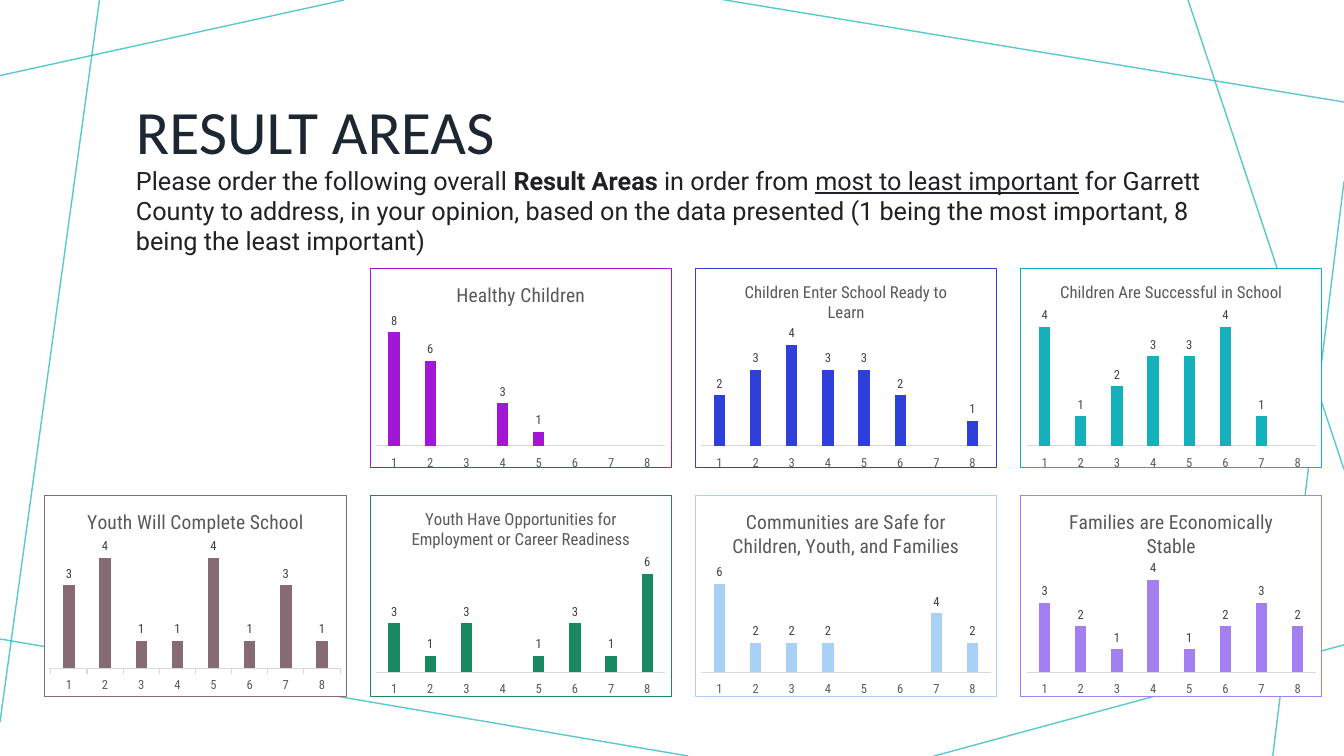
from collections import namedtuple
from dataclasses import dataclass

from lxml import etree
from pptx import Presentation
from pptx.chart.data import CategoryChartData
from pptx.dml.color import RGBColor
from pptx.enum.chart import XL_CHART_TYPE, XL_LABEL_POSITION, XL_TICK_LABEL_POSITION, XL_TICK_MARK
from pptx.enum.shapes import MSO_CONNECTOR
from pptx.enum.text import MSO_ANCHOR
from pptx.oxml import parse_xml
from pptx.oxml.ns import nsdecls, qn
from pptx.util import Inches, Pt

COLUMNS = XL_CHART_TYPE.COLUMN_CLUSTERED
OUTSIDE_END = XL_LABEL_POSITION.OUTSIDE_END
LABELS_LOW = XL_TICK_LABEL_POSITION.LOW
TICK_NONE, TICK_OUT = XL_TICK_MARK.NONE, XL_TICK_MARK.OUTSIDE
STRAIGHT = MSO_CONNECTOR.STRAIGHT
MIDDLE, TOP = MSO_ANCHOR.MIDDLE, MSO_ANCHOR.TOP

SLIDE_WIDTH, SLIDE_HEIGHT = Inches(13.33), Inches(7.5)
Box = namedtuple("Box", "left top width height")
Panel = namedtuple("Panel", "column row title size color values plot_top plot_bottom ticks")


@dataclass(frozen=True)
class Theme:
    heading_font: str = "Calibri"
    body_font: str = "Roboto"
    chart_font: str = "Roboto Condensed"
    heading_size: float = 44
    body_size: float = 18
    chart_size: float = 10
    label_size: float = 9
    heading: str = "1C2732"
    body: str = "202124"
    chart_text: str = "000000"
    muted: str = "595959"
    value: str = "404040"
    axis: str = "D9D9D9"
    accent: str = "14B1BC"
    paper: str = "FFFFFF"


THEME = Theme()

BACKGROUND_LINES = [
    (25.6, 0, 0, 10), (7.4, 0, 0, 95.5), (51.2, 100, -0.4, 84.4), (100, 85.3, 69.5, 100),
    (100, 24, 94.7, 100), (100, 62.1, 88.4, 0), (100, 13.5, 53.6, -0.1),
]

PANELS = [
    Panel(2, 0, "Children Enter School Ready to Learn", 12, "2E40D9",
          (2, 3, 4, 3, 3, 2, None, 1), 0.38, 0.89, TICK_NONE),
    Panel(1, 0, "Healthy Children", 14, "A217D5",
          (8, 6, None, 3, 1, None, None, None), 0.32, 0.89, TICK_NONE),
    Panel(3, 0, "Children Are Successful in School", 12, "14B1BC",
          (4, 1, 2, 3, 3, 4, 1, None), 0.29, 0.89, TICK_NONE),
    Panel(0, 1, "Youth Will Complete School", 14, "866B74",
          (3, 4, 1, 1, 4, 1, 3, 1), 0.31, 0.86, TICK_OUT),
    Panel(1, 1, "Youth Have Opportunities for Employment or Career Readiness", 12, "198962",
          (3, 1, 3, None, 1, 3, 1, 6), 0.39, 0.88, TICK_NONE),
    Panel(2, 1, "Communities are Safe for Children, Youth, and Families", 14, "A9D1F5",
          (6, 2, 2, 2, None, None, 4, 2), 0.44, 0.88, TICK_NONE),
    Panel(3, 1, "Families are Economically Stable", 14, "A37FF1",
          (3, 2, 1, 4, 1, 2, 3, 2), 0.42, 0.88, TICK_NONE),
]


def across(percent):
    return round(SLIDE_WIDTH * percent / 100)


def down(percent):
    return round(SLIDE_HEIGHT * percent / 100)


def place(box):
    return across(box.left), down(box.top), across(box.width), down(box.height)


def style_font(font, name, size, color):
    font.name, font.size = name, Pt(size)
    font.color.rgb = RGBColor.from_string(color)


def add_background(slide):
    for start_x, start_y, end_x, end_y in BACKGROUND_LINES:
        line = slide.shapes.add_connector(
            STRAIGHT, across(start_x), down(start_y), across(end_x), down(end_y))
        line.line.width = Pt(1)
        line.line.color.rgb = RGBColor.from_string(THEME.accent)
        color = next(line.element.iter(qn("a:srgbClr")))
        etree.SubElement(color, qn("a:alpha"), val="70000")
        etree.SubElement(line.element.spPr, qn("a:effectLst"))


def add_text(slide, box, runs, font, size, color, anchor, line_spacing):
    frame = slide.shapes.add_textbox(*place(box)).text_frame
    frame.word_wrap = True
    frame.vertical_anchor = anchor
    paragraph = frame.paragraphs[0]
    paragraph.line_spacing = line_spacing
    for text, bold, underline in runs:
        run = paragraph.add_run()
        run.text = text
        style_font(run.font, font, size, color)
        run.font.bold, run.font.underline = bold, underline


def add_header(slide, box):
    title_box = box._replace(height=20.13)
    add_text(slide, title_box, [("RESULT AREAS", False, False)],
             THEME.heading_font, THEME.heading_size, THEME.heading, MIDDLE, 0.9)
    question_box = Box(box.left, box.top + 13.47, box.width, 15.33)
    question = [
        ("Please order the following overall ", False, False),
        ("Result Areas", True, False),
        (" in order from ", False, False),
        ("most to least important", False, True),
        (" for Garrett County to address, in your opinion, based on the data presented "
         "(1 being the most important, 8 being the least important)", False, False),
    ]
    add_text(slide, question_box, question,
             THEME.body_font, THEME.body_size, THEME.body, TOP, 1)


def frame_chart(chart, color):
    chart.element.find(qn("c:chart")).addnext(parse_xml(
        f'<c:spPr {nsdecls("c", "a")}>'
        f'<a:solidFill><a:srgbClr val="{THEME.paper}"/></a:solidFill>'
        f'<a:ln w="9525"><a:solidFill><a:srgbClr val="{color}"/></a:solidFill></a:ln></c:spPr>'))


def fix_plot_area(chart, top, height):
    plot_area = next(chart.element.iter(qn("c:plotArea")))
    for layout in plot_area.findall(qn("c:layout")):
        plot_area.remove(layout)
    plot_area.insert(0, parse_xml(
        f'<c:layout {nsdecls("c")}><c:manualLayout><c:layoutTarget val="inner"/>'
        '<c:xMode val="edge"/><c:yMode val="edge"/><c:x val="0.02"/>'
        f'<c:y val="{top:.3f}"/><c:w val="0.96"/><c:h val="{height:.3f}"/>'
        '</c:manualLayout></c:layout>'))


def add_panel(slide, box, panel):
    data = CategoryChartData()
    data.categories = [str(rank) for rank in range(1, 9)]
    data.add_series(panel.title, panel.values)
    chart = slide.shapes.add_chart(COLUMNS, *place(box), data).chart
    style_font(chart.font, THEME.chart_font, THEME.chart_size, THEME.chart_text)
    chart.has_legend = False

    chart.has_title = True
    title = chart.chart_title.text_frame.paragraphs[0].add_run()
    title.text = panel.title
    style_font(title.font, THEME.chart_font, panel.size, THEME.muted)
    title.font.bold = False

    headroom = 1.25
    height = (panel.plot_bottom - panel.plot_top) * headroom
    fix_plot_area(chart, panel.plot_bottom - height, height)
    frame_chart(chart, panel.color)

    values = chart.value_axis
    values.visible = False
    values.has_major_gridlines = False
    values.minimum_scale = 0
    values.maximum_scale = max(filter(None, panel.values)) * headroom

    ranks = chart.category_axis
    ranks.major_tick_mark, ranks.minor_tick_mark = panel.ticks, TICK_NONE
    ranks.tick_label_position = LABELS_LOW
    ranks.format.line.width = Pt(0.75)
    ranks.format.line.color.rgb = RGBColor.from_string(THEME.axis)
    style_font(ranks.tick_labels.font, THEME.chart_font, THEME.label_size, THEME.muted)

    plot = chart.plots[0]
    plot.gap_width, plot.overlap, plot.vary_by_categories = 219, -27, False
    series = plot.series[0]
    series.invert_if_negative = False
    series.format.fill.solid()
    series.format.fill.fore_color.rgb = RGBColor.from_string(panel.color)
    labels = series.data_labels
    labels.show_value, labels.position = True, OUTSIDE_END
    style_font(labels.font, THEME.chart_font, THEME.label_size, THEME.value)


def add_panel_grid(slide, box):
    column_step, row_step = 24.2, 30
    for panel in PANELS:
        cell = Box(box.left + panel.column * column_step, box.top + panel.row * row_step,
                   box.width - 3 * column_step, box.height - row_step)
        add_panel(slide, cell, panel)


def main():
    presentation = Presentation()
    presentation.slide_width, presentation.slide_height = SLIDE_WIDTH, SLIDE_HEIGHT
    slide = presentation.slides.add_slide(presentation.slide_layouts[6])
    add_background(slide)
    add_header(slide, Box(9.38, 7.73, 81.25, 28.8))
    add_panel_grid(slide, Box(3.3, 35.5, 95.1, 56.7))
    presentation.save("out.pptx")


if __name__ == "__main__":
    main()
